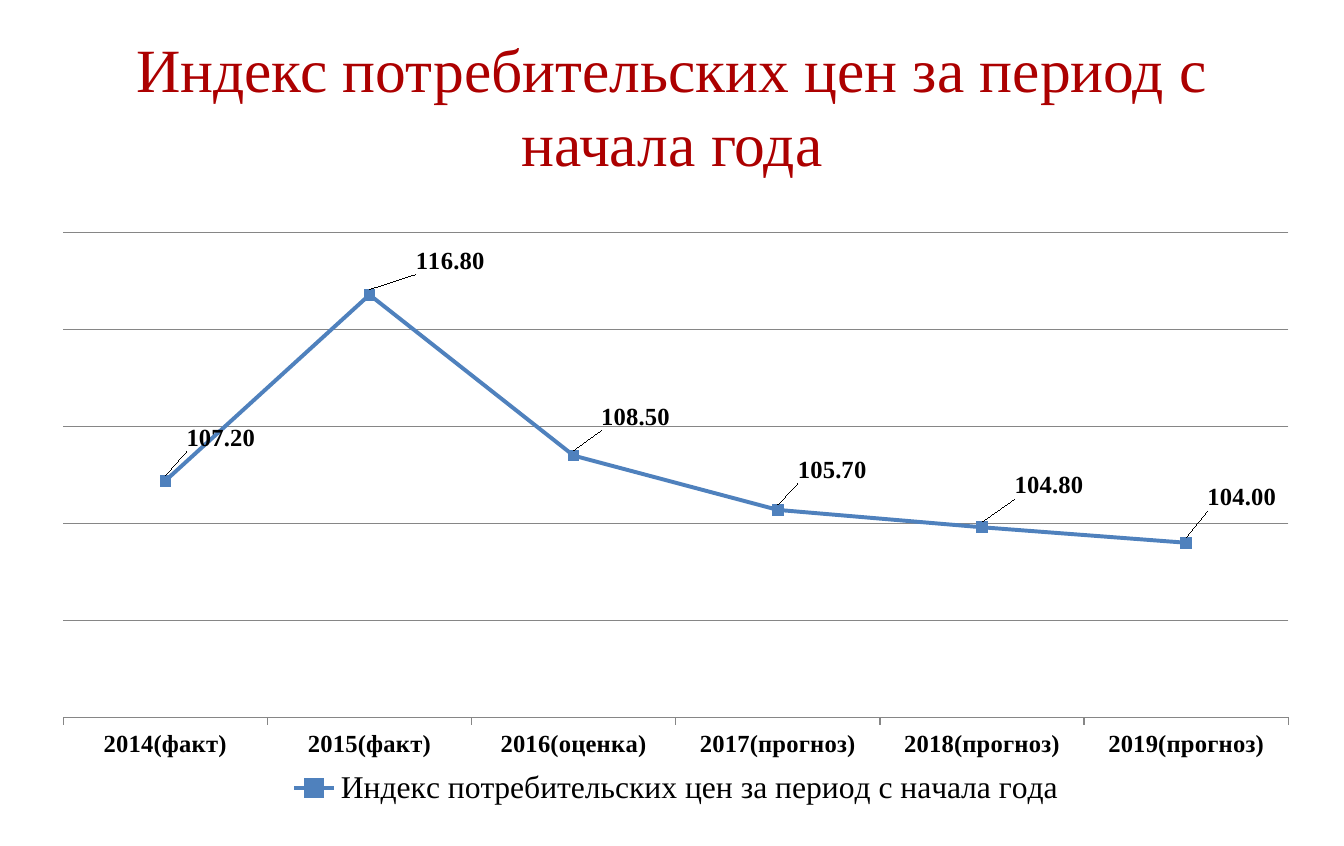
import pptx
import pptx.chart.data
import pptx.dml.color
import pptx.enum.chart
import pptx.enum.text
import pptx.oxml
import pptx.oxml.ns
import pptx.util

Inches = pptx.util.Inches
Pt = pptx.util.Pt
RGBColor = pptx.dml.color.RGBColor

DARK_RED = RGBColor(0xAC, 0x00, 0x00)
BLACK = RGBColor(0x00, 0x00, 0x00)
BLUE = RGBColor(0x4F, 0x81, 0xBD)
GRAY = RGBColor(0x86, 0x86, 0x86)

TITLE = "Индекс потребительских цен за период с начала года"
NUMBER_FORMAT = "#,##0.00"
# category, index, label shift from the spot above its marker, in inches
PRICE_INDEX = [
    ("2014(факт)", 107.2, 0.44, -0.15),
    ("2015(факт)", 116.8, 0.64, -0.08),
    ("2016(оценка)", 108.5, 0.49, -0.12),
    ("2017(прогноз)", 105.7, 0.43, -0.13),
    ("2018(прогноз)", 104.8, 0.53, -0.14),
    ("2019(прогноз)", 104, 0.44, -0.17),
]


def manual_layout(**settings):
    """Return a c:layout element with the given settings in order."""
    items = "".join(f'<c:{key} val="{value}"/>' for key, value in settings.items())
    return pptx.oxml.parse_xml(
        f'<c:layout {pptx.oxml.ns.nsdecls("c")}>'
        f"<c:manualLayout>{items}</c:manualLayout></c:layout>"
    )


class SlideBuilder:
    font_name = "Times New Roman"

    def __init__(self, slide):
        self.slide = slide

    def style(self, font, size, color=BLACK, bold=False):
        font.name = self.font_name
        font.size = Pt(size)
        font.bold = bold
        font.color.rgb = color

    def title(self, text, left, top, width, height):
        box = self.slide.shapes.add_textbox(
            Inches(left), Inches(top), Inches(width), Inches(height))
        tf = box.text_frame
        tf.word_wrap = True
        tf.vertical_anchor = pptx.enum.text.MSO_ANCHOR.MIDDLE
        p = tf.paragraphs[0]
        p.alignment = pptx.enum.text.PP_ALIGN.CENTER
        r = p.add_run()
        r.text = text
        self.style(r.font, 35, DARK_RED)

    def line_chart(self, name, rows, left, top, width, height):
        data = pptx.chart.data.CategoryChartData(number_format=NUMBER_FORMAT)
        data.categories = [row[0] for row in rows]
        data.add_series(name, [row[1] for row in rows])
        chart = self.slide.shapes.add_chart(
            pptx.enum.chart.XL_CHART_TYPE.LINE_MARKERS,
            Inches(left), Inches(top), Inches(width), Inches(height), data).chart
        self.style(chart.font, 18)
        chart.has_title = False
        chart.has_legend = True
        chart.legend.position = pptx.enum.chart.XL_LEGEND_POSITION.BOTTOM
        chart.legend.include_in_layout = False
        self.style(chart.legend.font, 18)

        plot_area = chart._chartSpace.chart.plotArea
        for old in plot_area.findall(pptx.oxml.ns.qn("c:layout")):
            plot_area.remove(old)
        plot_area.insert(0, manual_layout(
            layoutTarget="inner", xMode="edge", yMode="edge",
            x=0.015, y=0.032, w=0.969, h=0.81))

        self.axes(chart)
        chart.plots[0].vary_by_categories = False
        series = chart.plots[0].series[0]
        self.series_line(series)
        self.point_labels(series, [(row[2] / width, row[3] / height) for row in rows])

    def axes(self, chart):
        years = chart.category_axis
        years.major_tick_mark = pptx.enum.chart.XL_TICK_MARK.OUTSIDE
        self.style(years.tick_labels.font, 14, bold=True)
        values = chart.value_axis
        values.visible = False
        values.minimum_scale, values.maximum_scale, values.major_unit = 95, 120, 5
        values.has_major_gridlines = True
        for line in (years.format.line, values.major_gridlines.format.line):
            line.color.rgb = GRAY
            line.width = Pt(0.75)

    def series_line(self, series):
        series.smooth = False
        series.format.line.color.rgb = BLUE
        series.format.line.width = Pt(2.25)
        marker = series.marker
        marker.style = pptx.enum.chart.XL_MARKER_STYLE.SQUARE
        marker.size = 6
        marker.format.fill.solid()
        marker.format.fill.fore_color.rgb = BLUE
        marker.format.line.color.rgb = BLUE

    def point_labels(self, series, shifts):
        labels = series.data_labels
        labels.show_value = True
        labels.number_format = NUMBER_FORMAT
        labels.number_format_is_linked = False
        self.style(labels.font, 14, bold=True)
        for i, (dx, dy) in enumerate(shifts):
            label = series.points[i].data_label
            self.style(label.font, 14, bold=True)
            label.position = pptx.enum.chart.XL_LABEL_POSITION.ABOVE
            label._dLbl.insert(1, manual_layout(x=round(dx, 3), y=round(dy, 3)))


def main():
    prs = pptx.Presentation()
    prs.slide_width = Inches(10.63)
    prs.slide_height = Inches(6.69)
    builder = SlideBuilder(prs.slides.add_slide(prs.slide_layouts[6]))
    builder.title(TITLE, 0.53, 0.27, 9.57, 1.12)
    builder.line_chart(TITLE, PRICE_INDEX, 0.35, 1.69, 10, 4.73)
    prs.save("out.pptx")


if __name__ == "__main__":
    main()
